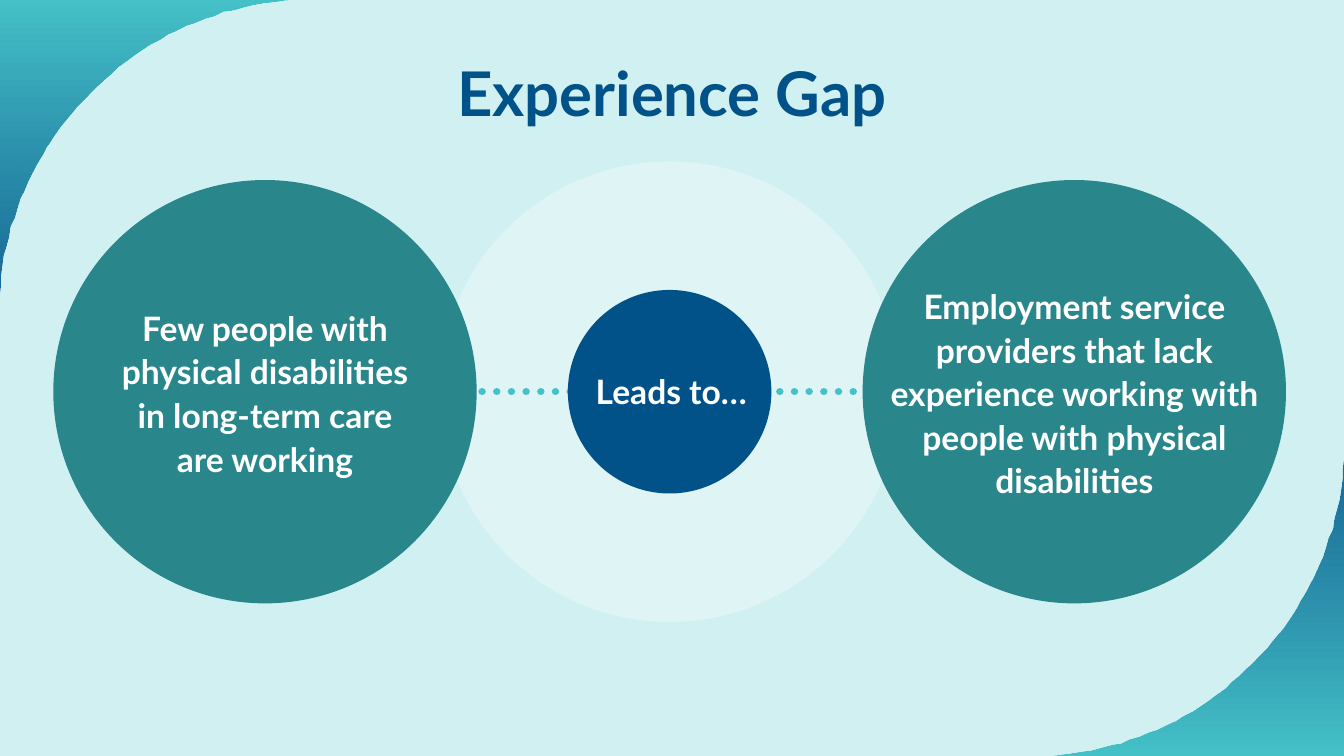
"""Build the Experience Gap slide: two linked circles around a central step."""
import dataclasses

import lxml.etree
import pptx
import pptx.dml.color
import pptx.enum.dml
import pptx.enum.shapes
import pptx.enum.text
import pptx.oxml.ns
import pptx.util

Pt = pptx.util.Pt
qn = pptx.oxml.ns.qn


@dataclasses.dataclass(frozen=True)
class Theme:
    """Colours, font and type sizes of the slide."""
    background: str = "D1F0F1"
    white: str = "FFFFFF"
    navy: str = "005288"
    teal: str = "29868B"
    dots: str = "45C2C9"
    corner: str = "45C2C8"
    font: str = "Lato"
    title_size: float = 44
    label_size: float = 24


def rgb(value):
    """Turn a hex string into a colour."""
    return pptx.dml.color.RGBColor.from_string(value)


def set_alpha(shape, percent):
    """Set the opacity of the last colour in a shape's fill."""
    colour = list(shape.element.spPr.iter(qn("a:srgbClr")))[-1]
    lxml.etree.SubElement(colour, qn("a:alpha")).set("val", str(percent * 1000))


def write_text(frame, text, *, font, size, color, spacing, anchor):
    """Write centred bold text into a text frame."""
    frame.word_wrap = True
    frame.vertical_anchor = anchor
    paragraph = frame.paragraphs[0]
    paragraph.alignment = pptx.enum.text.PP_ALIGN.CENTER
    paragraph.line_spacing = spacing
    run = paragraph.add_run()
    run.text = text
    run.font.name = font
    run.font.size = Pt(size)
    run.font.bold = True
    run.font.color.rgb = rgb(color)


def curve_points(start, first, second, end, steps=48):
    """Sample a cubic curve at equal parameter steps."""
    points = []
    for step in range(steps + 1):
        t = step / steps
        weights = ((1 - t) ** 3, 3 * t * (1 - t) ** 2, 3 * t * t * (1 - t), t ** 3)
        points.append(tuple(
            sum(weight * value for weight, value in zip(weights, values))
            for values in zip(start, first, second, end)))
    return points


class SlideBuilder:
    """Hold the theme and the current slide, and add elements to it."""

    def __init__(self, slide, theme):
        """Keep the slide and theme and paint the background."""
        self.slide = slide
        self.theme = theme
        slide.background.fill.solid()
        slide.background.fill.fore_color.rgb = rgb(theme.background)

    def circle(self, x, y, diameter, color, opacity=100):
        """Add a plain circle around a centre."""
        shape = self.slide.shapes.add_shape(
            pptx.enum.shapes.MSO_SHAPE.OVAL, Pt(x - diameter / 2),
            Pt(y - diameter / 2), Pt(diameter), Pt(diameter))
        shape.shadow.inherit = False
        shape.fill.solid()
        shape.fill.fore_color.rgb = rgb(color)
        shape.line.fill.background()
        if opacity < 100:
            set_alpha(shape, opacity)

    def text(self, x, y, width, height, text, **style):
        """Add a text box around a centre."""
        box = self.slide.shapes.add_textbox(
            Pt(x - width / 2), Pt(y - height / 2), Pt(width), Pt(height))
        write_text(box.text_frame, text, font=self.theme.font, **style)

    def label(self, x, y, width, height, text):
        """Add the white text of a circle."""
        self.text(x, y, width, height, text, size=self.theme.label_size,
                  color=self.theme.white, spacing=1.08,
                  anchor=pptx.enum.text.MSO_ANCHOR.MIDDLE)

    def dotted_line(self, start, end, y):
        """Add a horizontal line of round dots."""
        connector = self.slide.shapes.add_connector(
            pptx.enum.shapes.MSO_CONNECTOR.STRAIGHT, Pt(start), Pt(y), Pt(end), Pt(y))
        connector.line.color.rgb = rgb(self.theme.dots)
        connector.line.width = Pt(5.25)
        connector.line.dash_style = pptx.enum.dml.MSO_LINE.ROUND_DOT
        properties = connector.element.spPr
        properties.find(qn("a:ln")).set("cap", "rnd")
        lxml.etree.SubElement(properties, qn("a:effectLst"))

    def corner(self, left, top, side, rotation):
        """Add a curved gradient corner."""
        curve = curve_points((224, 0), (104.4, 0), (6.5, 94.3), (0, 212.4))
        outline = [(side, 0), *curve, (0, side)]
        builder = self.slide.shapes.build_freeform(0, 0, scale=Pt(1))
        builder.add_line_segments(outline, close=True)
        shape = builder.convert_to_shape(Pt(left), Pt(top))
        shape.rotation = rotation
        shape.shadow.inherit = False
        shape.line.fill.background()
        shape.fill.gradient()
        shape.fill.gradient_angle = 270
        for stop, color in zip(shape.fill.gradient_stops,
                               (self.theme.corner, self.theme.navy)):
            stop.color.rgb = rgb(color)
        set_alpha(shape, 90)


def main():
    """Build and save the slide."""
    theme = Theme()
    width, height = 960, 540
    presentation = pptx.Presentation()
    presentation.slide_width, presentation.slide_height = Pt(width), Pt(height)
    slide = presentation.slides.add_slide(presentation.slide_layouts[6])
    builder = SlideBuilder(slide, theme)

    axis, left, middle, right = 279.8, 189.3, 478.3, 767.4
    large, small, halo, side = 302.4, 145.4, 329, 230.4

    builder.circle(middle, axis, halo, theme.white, opacity=30)
    builder.dotted_line(302.4, 411.8, axis)
    builder.text(width / 2, 64.6, 788, 62, "Experience Gap",
                 size=theme.title_size, color=theme.navy, spacing=1.05,
                 anchor=pptx.enum.text.MSO_ANCHOR.BOTTOM)
    builder.corner(0, 0, side, 0)
    builder.corner(width - side, height - side, side, 180)
    builder.circle(left, axis, large, theme.teal)
    builder.label(left, axis, 232.6, 191.5,
                  "Few people with physical disabilities in long-term care are working")
    builder.dotted_line(546.5, 655.9, axis)
    builder.circle(middle, axis, small, theme.navy)
    builder.label(479.5, 278.3, 128, 52.6, "Leads to…")
    builder.circle(right, axis, large, theme.teal)
    builder.label(right, axis, 279, 191.5,
                  "Employment service providers that lack experience working "
                  "with people with physical disabilities")
    presentation.save("out.pptx")


if __name__ == "__main__":
    main()
